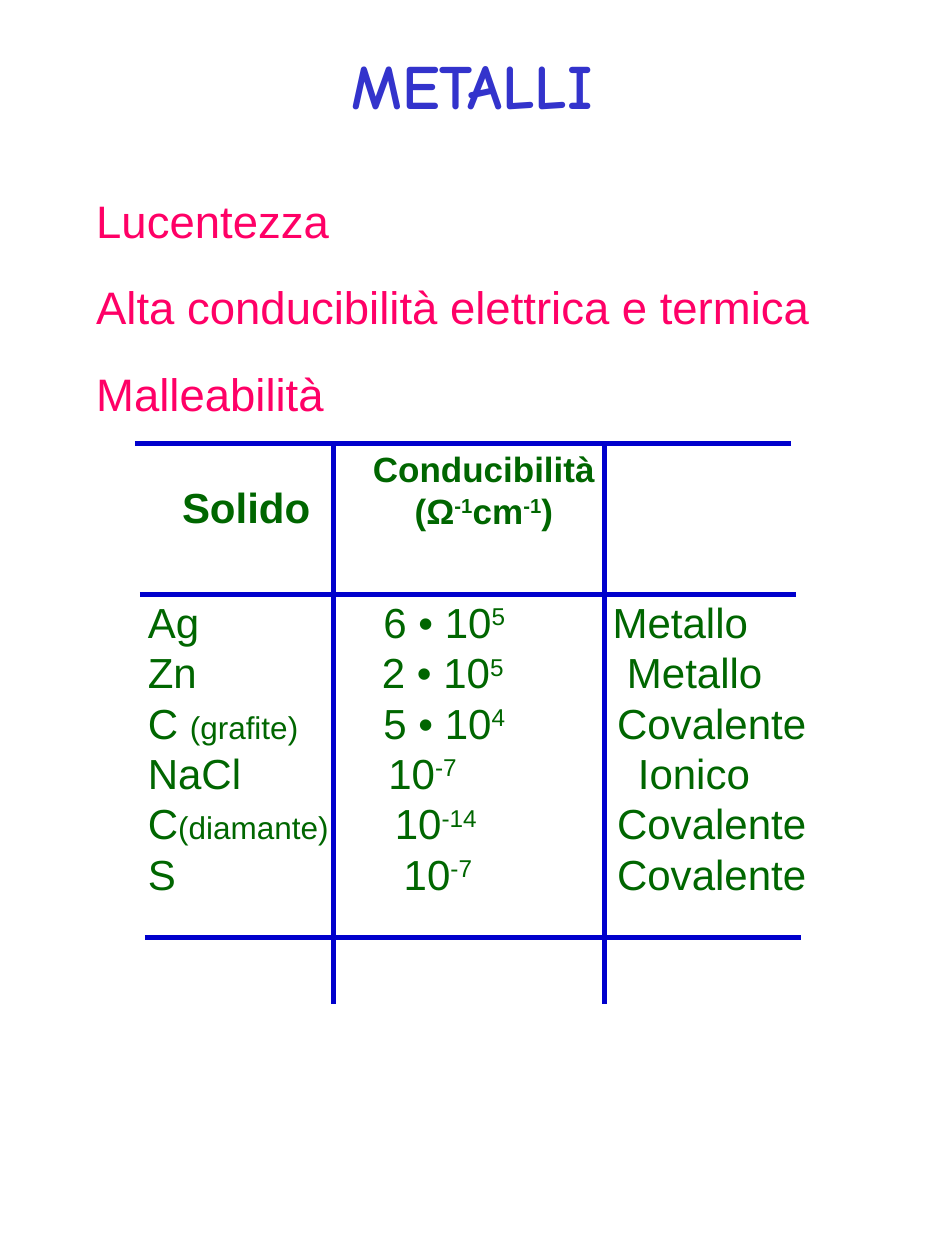
from dataclasses import dataclass

from lxml.etree import SubElement
from pptx import Presentation
from pptx.dml.color import RGBColor
from pptx.enum.shapes import MSO_CONNECTOR
from pptx.enum.text import MSO_AUTO_SIZE, PP_ALIGN
from pptx.oxml.ns import qn
from pptx.util import Cm, Pt

PINK = RGBColor(0xFF, 0x00, 0x66)
GREEN = RGBColor(0x00, 0x66, 0x00)
RULE_BLUE = RGBColor(0x00, 0x00, 0xCC)
TITLE_BLUE = RGBColor(0x33, 0x33, 0xCC)


@dataclass
class Box:
    left: float
    top: float
    width: float
    height: float


@dataclass
class Rule:
    start: tuple[float, float]
    end: tuple[float, float]


@dataclass
class Solid:
    name: str
    note: str
    value: str
    exponent: str
    kind: str
    value_tab: float
    kind_tab: float


PROPERTIES = [
    ("Lucentezza", Box(1.78, 3.81, 5.05, 1.27)),
    ("Alta conducibilità elettrica e termica", Box(1.78, 5.54, 14.86, 1.27)),
    ("Malleabilità", Box(1.78, 7.29, 4.95, 1.27)),
]
SOLIDS = [
    Solid("Ag", "", "6 • 10", "5", "Metallo", 4.75, 9.37),
    Solid("Zn", "", "2 • 10", "5", "Metallo", 4.72, 9.66),
    Solid("C ", "(grafite)", "5 • 10", "4", "Covalente", 4.75, 9.46),
    Solid("NaCl", "", "10", "-7", "Ionico", 4.85, 9.88),
    Solid("C", "(diamante)", "10", "-14", "Covalente", 4.98, 9.46),
    Solid("S", "", "10", "-7", "Covalente", 5.16, 9.46),
]
RULES = [
    Rule((2.72, 8.94), (15.95, 8.94)),
    Rule((2.82, 11.99), (16.05, 11.99)),
    Rule((2.92, 18.9), (16.15, 18.9)),
    Rule((6.73, 8.89), (6.73, 20.24)),
    Rule((12.19, 8.89), (12.19, 20.24)),
]


def add_text_frame(slide, box: Box, wrap: bool = False):
    shape = slide.shapes.add_textbox(Cm(box.left), Cm(box.top), Cm(box.width), Cm(box.height))
    frame = shape.text_frame
    frame.word_wrap = wrap
    frame.auto_size = MSO_AUTO_SIZE.SHAPE_TO_FIT_TEXT
    frame.margin_left = frame.margin_right = Cm(0.16)
    frame.margin_top = frame.margin_bottom = Cm(0.08)
    return frame


def add_run(paragraph, text: str, *, size: float = 24, color: RGBColor = GREEN,
            bold: bool = False, font: str = "Arial", raised: bool = False) -> None:
    run = paragraph.add_run()
    run.text = text
    run.font.size = Pt(size)
    run.font.name = font
    run.font.bold = bold
    run.font.color.rgb = color
    if raised:
        run.font._element.set("baseline", "30000")


def set_tabs(paragraph, positions: tuple[float, ...]) -> None:
    tab_list = SubElement(paragraph._p.get_or_add_pPr(), qn("a:tabLst"))
    for position in positions:
        SubElement(tab_list, qn("a:tab"), pos=str(int(Cm(position))), algn="l")


def add_solid(paragraph, solid: Solid) -> None:
    set_tabs(paragraph, (solid.value_tab, solid.kind_tab))
    add_run(paragraph, solid.name)
    if solid.note:
        add_run(paragraph, solid.note, size=18)
    add_run(paragraph, "\t" + solid.value)
    add_run(paragraph, solid.exponent, raised=True)
    add_run(paragraph, "\t" + solid.kind)


def add_rule(slide, rule: Rule) -> None:
    connector = slide.shapes.add_connector(
        MSO_CONNECTOR.STRAIGHT, *map(Cm, rule.start), *map(Cm, rule.end))
    connector.line.color.rgb = RULE_BLUE
    connector.line.width = Pt(3)
    SubElement(connector._element.spPr, qn("a:effectLst"))


def main() -> None:
    presentation = Presentation()
    presentation.slide_width = Cm(19.05)
    presentation.slide_height = Cm(25.4)
    slide = presentation.slides.add_slide(presentation.slide_layouts[6])

    # Title
    frame = add_text_frame(slide, Box(4.95, 0.86, 9.14, 2.41))
    title = frame.paragraphs[0]
    title.alignment = PP_ALIGN.CENTER
    add_run(title, "METALLI", size=36, color=TITLE_BLUE, bold=True, font="Comic Neue")

    # Properties of metals
    for text, box in PROPERTIES:
        frame = add_text_frame(slide, box)
        add_run(frame.paragraphs[0], text, size=26, color=PINK)

    # Column headings
    frame = add_text_frame(slide, Box(3.51, 9.63, 2.92, 1.17))
    add_run(frame.paragraphs[0], "Solido", bold=True)

    frame = add_text_frame(slide, Box(7.34, 8.94, 4.83, 1.85))
    heading, unit = frame.paragraphs[0], frame.add_paragraph()
    heading.alignment = unit.alignment = PP_ALIGN.CENTER
    add_run(heading, "Conducibilità", size=20, bold=True)
    for text, raised in (("(Ω", False), ("-1", True), ("cm", False), ("-1", True), (")", False)):
        add_run(unit, text, size=20, bold=True, raised=raised)

    # Conductivity of each solid
    frame = add_text_frame(slide, Box(2.82, 11.94, 13.89, 6.3), wrap=True)
    for index, solid in enumerate(SOLIDS):
        add_solid(frame.add_paragraph() if index else frame.paragraphs[0], solid)

    # Rules between rows and columns
    for rule in RULES:
        add_rule(slide, rule)

    presentation.save("out.pptx")


if __name__ == "__main__":
    main()
